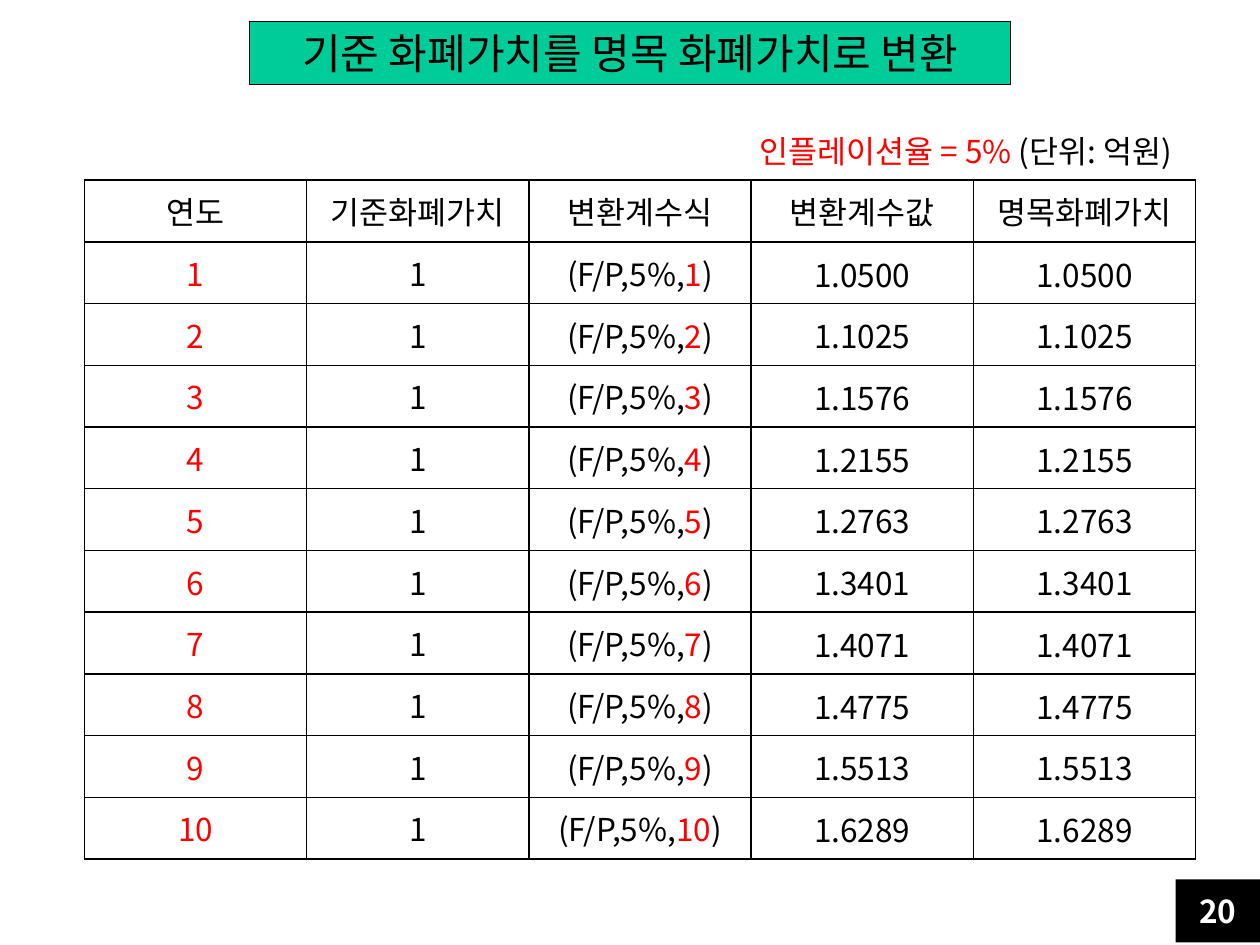
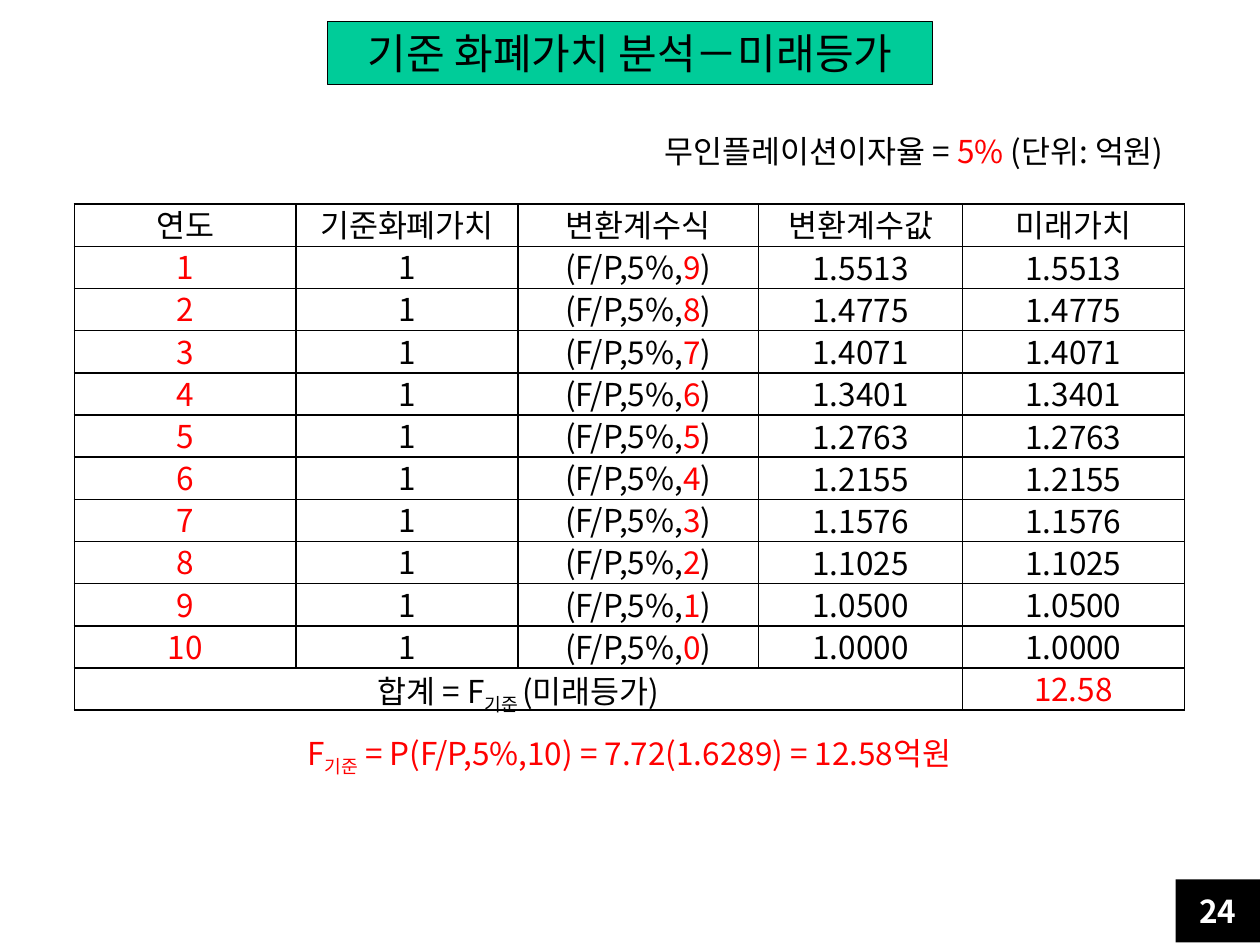
"""Build two slides that convert constant money values with compound factors."""
from lxml import etree
from pptx import Presentation
from pptx.dml.color import RGBColor
from pptx.enum import shapes, text
from pptx.oxml.ns import qn
from pptx.util import Inches, Pt

COLORS = {"ink": "000000", "accent": "FF0000", "title": "00CC99", "paper": "FFFFFF"}
FONT = "Noto Sans CJK KR"
HEADER_FONT = "Times New Roman"
SLIDE_WIDTH, SLIDE_HEIGHT = 10, 7.5
RATE = 0.05
YEARS = range(1, 11)
HEADINGS = ["연도", "기준화폐가치", "변환계수식", "변환계수값"]


def color(name):
    """Return the named colour."""
    return RGBColor.from_string(COLORS[name])


def ink(words):
    """Return a black piece of text."""
    return words, "ink", 0


def accent(words):
    """Return a red piece of text."""
    return words, "accent", 0


def subscript(words, name):
    """Return a lowered piece of text in the named colour."""
    return words, name, -25000


def write(frame, pieces, size=18, font=FONT, bold=False):
    """Fill a text frame with one centred paragraph made of coloured pieces."""
    frame.vertical_anchor = text.MSO_ANCHOR.MIDDLE
    paragraph = frame.paragraphs[0]
    paragraph.alignment = text.PP_ALIGN.CENTER
    paragraph.font.size = Pt(size)
    paragraph.font.name = font
    paragraph.font.bold = bold
    defaults = paragraph._p.pPr.find(qn("a:defRPr"))
    etree.SubElement(defaults, qn("a:ea"), typeface=FONT)
    same_color = len({name for _, name, _ in pieces}) == 1
    if same_color:
        paragraph.font.color.rgb = color(pieces[0][1])
    for words, name, baseline in pieces:
        run = paragraph.add_run()
        run.text = words
        if not same_color:
            run.font.color.rgb = color(name)
        if baseline:
            run._r.get_or_add_rPr().set("baseline", str(baseline))
    return paragraph


def add_title(slide, title, width):
    """Format the title placeholder as a centred green band."""
    shape = slide.shapes.title
    shape.left, shape.top = Inches((SLIDE_WIDTH - width) / 2), Inches(0.17)
    shape.width, shape.height = Inches(width), Inches(0.5)
    shape.fill.solid()
    shape.fill.fore_color.rgb = color("title")
    shape.line.color.rgb = color("ink")
    shape.line.width = Pt(0.75)
    shape.text_frame.auto_size = text.MSO_AUTO_SIZE.NONE
    shape.text_frame.word_wrap = False
    write(shape.text_frame, [ink(title)], size=24)


def add_page_number(slide, number):
    """Put the page number in a black block in the bottom right corner."""
    width, height = 0.67, 0.5
    shape = slide.shapes.add_shape(
        shapes.MSO_SHAPE.RECTANGLE, Inches(SLIDE_WIDTH - width),
        Inches(SLIDE_HEIGHT - height - 0.02), Inches(width), Inches(height))
    shape.shadow.inherit = False
    shape.fill.solid()
    shape.fill.fore_color.rgb = color("ink")
    shape.line.fill.background()
    write(shape.text_frame, [("%d" % number, "paper", 0)], bold=True)


def add_text(slide, left, top, width, pieces):
    """Add one line of centred text."""
    box = slide.shapes.add_textbox(Inches(left), Inches(top), Inches(width), Inches(0.4))
    box.text_frame.word_wrap = True
    write(box.text_frame, pieces)


def add_borders(cell):
    """Draw a thin black line on all four sides of a cell."""
    properties = cell._tc.get_or_add_tcPr()
    for index, side in enumerate(("lnL", "lnR", "lnT", "lnB")):
        line = etree.Element(qn("a:" + side), w=str(Pt(1)))
        fill = etree.SubElement(line, qn("a:solidFill"))
        etree.SubElement(fill, qn("a:srgbClr"), val=COLORS["ink"])
        properties.insert(index, line)


def factor_rows(last_heading, periods):
    """Return the heading row and one row a year, with the factor for its periods."""
    rows = [[[ink(heading)] for heading in HEADINGS + [last_heading]]]
    for year, period in zip(YEARS, periods):
        value = [ink(f"{(1 + RATE) ** period:.4f}")]
        formula = [ink("(F/P,5%,"), accent(str(period)), ink(")")]
        rows.append([[accent(str(year))], [ink("1")], formula, value, value])
    return rows


def add_factor_table(slide, left, top, widths, row_height, rows,
                     header_font=FONT, line_spacing=1.0):
    """Add a ruled table; a cell of None joins the cell on its left."""
    table = slide.shapes.add_table(
        len(rows), len(widths), Inches(left), Inches(top),
        Inches(sum(widths)), Inches(row_height * len(rows))).table
    table.first_row = table.horz_banding = False
    for column, width in zip(table.columns, widths):
        column.width = Inches(width)
    for row_index, row in enumerate(rows):
        table.rows[row_index].height = Inches(row_height)
        for column_index, pieces in enumerate(row):
            cell = table.cell(row_index, column_index)
            is_value = row_index in YEARS and column_index >= 3
            cell.margin_left = cell.margin_right = Inches(0.01 if is_value else 0.07)
            cell.margin_top = Inches(0.01 if is_value else 0)
            cell.margin_bottom = 0
            cell.vertical_anchor = text.MSO_ANCHOR.MIDDLE
            cell.fill.background()
            add_borders(cell)
            if pieces:
                font = FONT if row_index else header_font
                paragraph = write(cell.text_frame, pieces, font=font)
                paragraph.line_spacing = line_spacing
        if None in row:
            first = row.index(None) - 1
            last = first + row.count(None)
            table.cell(row_index, first).merge(table.cell(row_index, last))


def add_slide(presentation, title, title_width, number):
    """Add a slide with the shared title band and page number."""
    slide = presentation.slides.add_slide(presentation.slide_layouts[5])
    add_title(slide, title, title_width)
    add_page_number(slide, number)
    return slide


def add_nominal_value_slide(presentation):
    """Add the slide that turns constant values into nominal values."""
    slide = add_slide(presentation, "기준 화폐가치를 명목 화폐가치로 변환", 6.04, 20)
    add_text(slide, 5.58, 1, 4.17, [accent("인플레이션율 = 5% "), ink("(단위: 억원)")])
    add_factor_table(slide, 0.67, 1.43, [1.764] * 5, 0.49,
                     factor_rows("명목화폐가치", YEARS), header_font=HEADER_FONT)


def add_future_value_slide(presentation):
    """Add the slide that sums the future values of constant amounts."""
    slide = add_slide(presentation, "기준 화폐가치 분석－미래등가", 4.8, 24)
    add_text(slide, 4.76, 1, 4.99,
             [ink("무인플레이션이자율 = "), accent("5%"), ink(" (단위: 억원)")])
    rows = factor_rows("미래가치", [YEARS[-1] - year for year in YEARS])
    total = [ink("합계 = F"), subscript("기준 ", "ink"), ink("(미래등가)")]
    rows.append([total, None, None, None, [accent("12.58")]])
    add_factor_table(slide, 0.59, 1.62, [1.76, 1.76, 1.91, 1.62, 1.76], 0.335, rows,
                     line_spacing=0.9)
    add_text(slide, 1.62, 5.8, 6.75,
             [accent("F"), subscript("기준", "accent"),
              accent(" = P(F/P,5%,10) = 7.72(1.6289) = 12.58억원")])


def main():
    """Build and save the presentation."""
    presentation = Presentation()
    presentation.slide_width = Inches(SLIDE_WIDTH)
    presentation.slide_height = Inches(SLIDE_HEIGHT)
    add_nominal_value_slide(presentation)
    add_future_value_slide(presentation)
    presentation.save("out.pptx")


if __name__ == "__main__":
    main()
